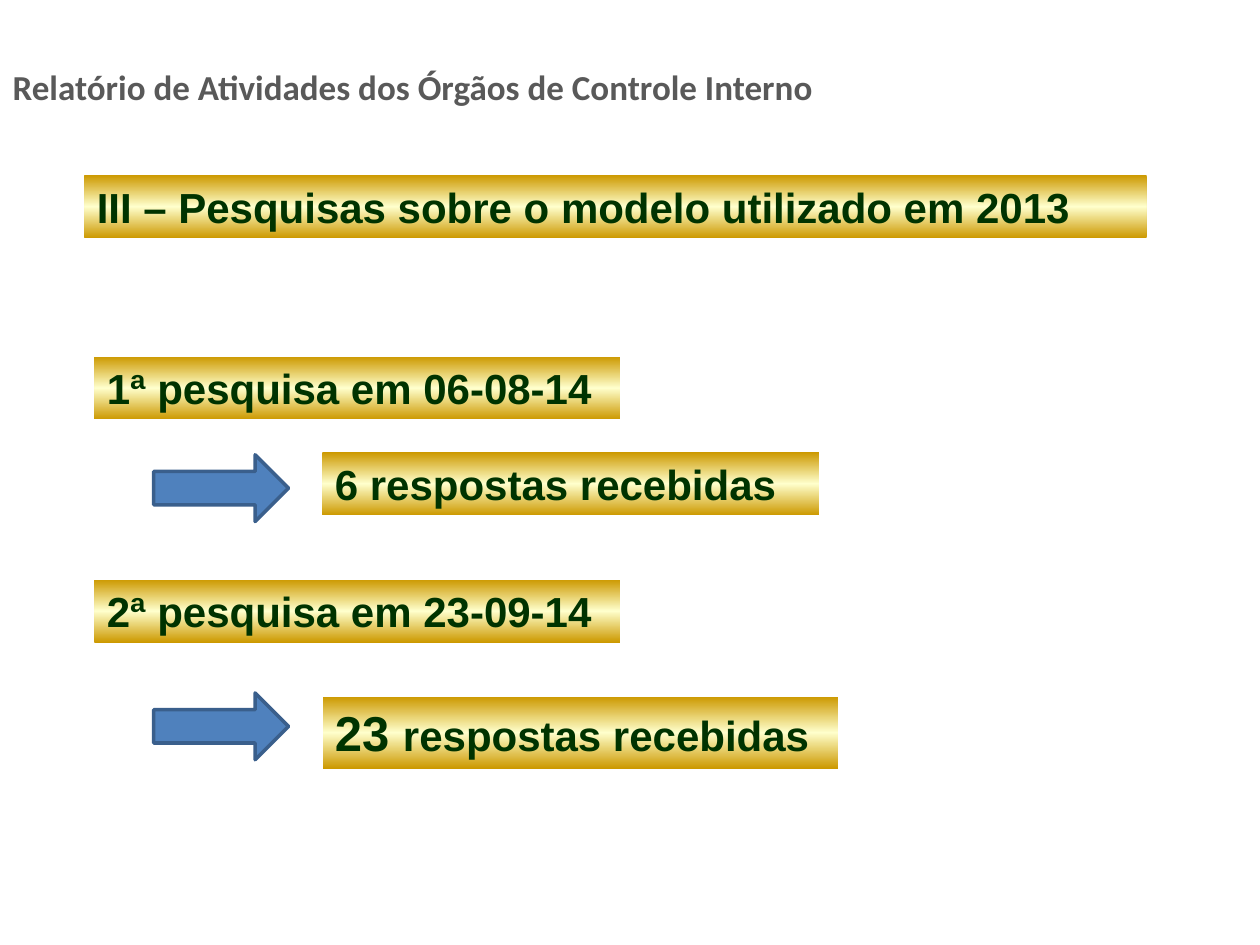
from copy import deepcopy

from pptx import Presentation
from pptx.dml.color import RGBColor
from pptx.enum.shapes import MSO_SHAPE as SHAPE
from pptx.enum.text import MSO_ANCHOR as ANCHOR, MSO_AUTO_SIZE as AUTO, PP_ALIGN as ALIGN
from pptx.oxml.ns import qn
from pptx.util import Inches, Pt

COLORS = {
    "title": "595959",
    "text": "003300",
    "gold": "CC9900",
    "cream": "FFFFCC",
    "arrow": "4F81BD",
    "arrow_line": "3A5F8C",
}


def rgb(name):
    return RGBColor.from_string(COLORS[name])


def add_run(p, text, size, font, color):
    r = p.add_run()
    r.text = text
    r.font.size = Pt(size)
    r.font.name = font
    r.font.bold = True
    r.font.color.rgb = rgb(color)


def set_title(s, text):
    title = s.shapes.title
    title.left, title.top = Inches(0), Inches(0.47)
    title.width, title.height = Inches(9), Inches(0.52)
    tf = title.text_frame
    tf.word_wrap = True
    tf.auto_size = AUTO.NONE
    tf.vertical_anchor = ANCHOR.TOP
    p = tf.paragraphs[0]
    p.alignment = ALIGN.LEFT
    add_run(p, text, 20, "Calibri", "title")


def fill_gold(sp):
    sp.fill.gradient()
    sp.fill.gradient_angle = 90
    stops = next(sp.element.iter(qn("a:gsLst")))
    stops.insert(1, deepcopy(stops[0]))
    bands = ((0, "gold"), (0.5, "cream"), (1, "gold"))
    for stop, (position, color) in zip(sp.fill.gradient_stops, bands):
        stop.position = position
        stop.color.rgb = rgb(color)


def add_banner(s, left, top, width, runs, height=0.5):
    sp = s.shapes.add_shape(SHAPE.RECTANGLE, Inches(left), Inches(top),
                            Inches(width), Inches(height))
    sp.shadow.inherit = False
    sp.line.fill.background()
    fill_gold(sp)
    tf = sp.text_frame
    tf.word_wrap = True
    tf.auto_size = AUTO.SHAPE_TO_FIT_TEXT
    tf.vertical_anchor = ANCHOR.TOP
    p = tf.paragraphs[0]
    p.alignment = ALIGN.LEFT
    for text, size in runs:
        add_run(p, text, size, "Arial", "text")


def add_arrow(s, top):
    sp = s.shapes.add_shape(SHAPE.RIGHT_ARROW, Inches(1.22), Inches(top),
                            Inches(1.07), Inches(0.53))
    sp.shadow.inherit = False
    sp.fill.solid()
    sp.fill.fore_color.rgb = rgb("arrow")
    sp.line.color.rgb = rgb("arrow_line")
    sp.line.width = Pt(2)


def main():
    prs = Presentation()
    prs.slide_width, prs.slide_height = Inches(10), Inches(7.5)
    s = prs.slides.add_slide(prs.slide_layouts[5])
    set_title(s, "Relatório de Atividades dos Órgãos de Controle Interno")
    add_banner(s, 0.67, 1.39, 8.43,
               [("III – Pesquisas sobre o modelo utilizado em 2013", 24)])
    add_banner(s, 0.75, 2.83, 4.17, [("1ª pesquisa em 06-08-14", 24)])
    add_banner(s, 0.75, 4.6, 4.17, [("2ª pesquisa em 23-09-14", 24)])
    add_arrow(s, 3.61)
    add_arrow(s, 5.5)
    add_banner(s, 2.56, 3.59, 3.94, [("6 respostas recebidas", 24)])
    add_banner(s, 2.56, 5.53, 4.09,
               [("23 ", 28), ("respostas recebidas", 24)], height=0.57)
    prs.save("out.pptx")


if __name__ == "__main__":
    main()
